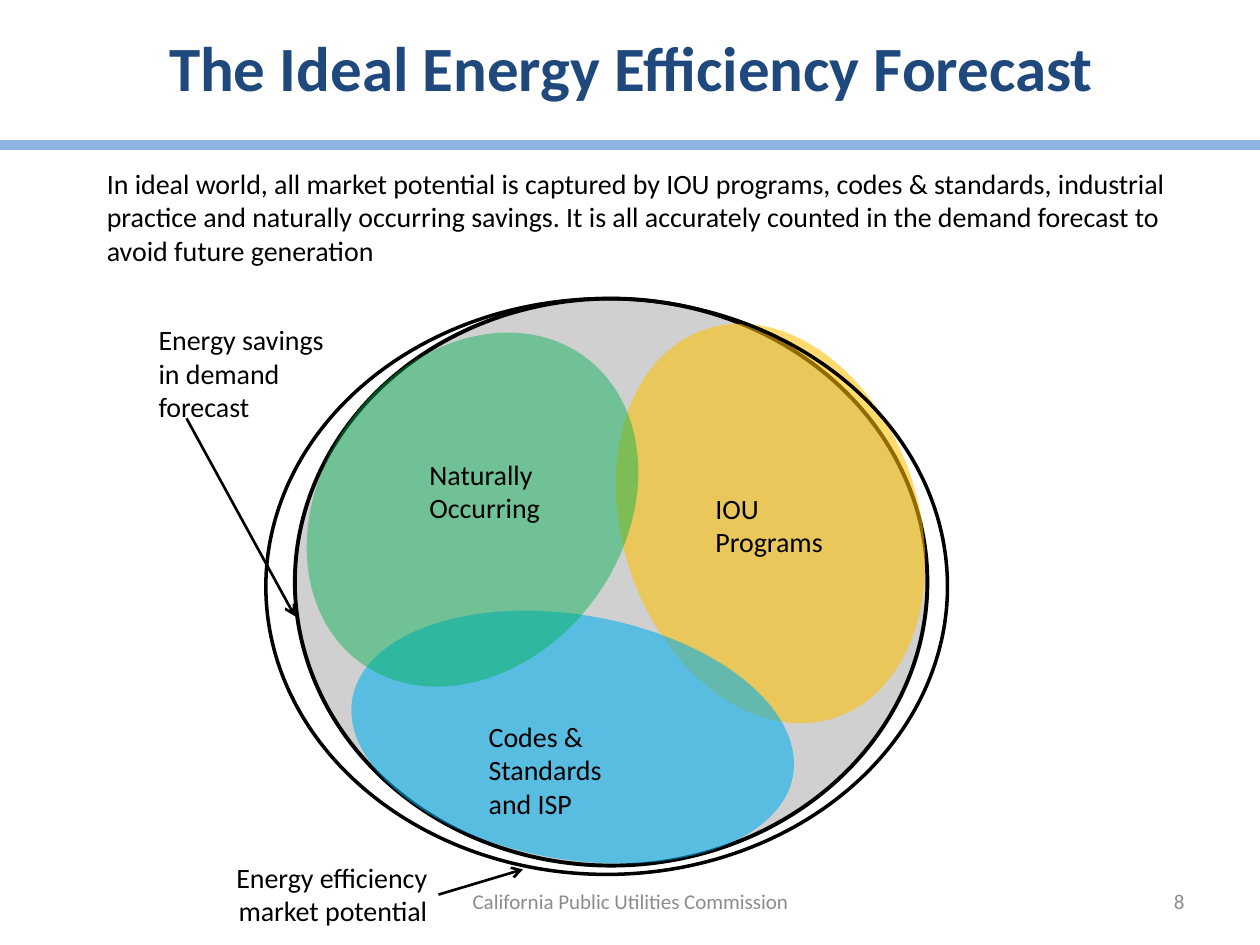
from lxml.etree import SubElement
from pptx import Presentation
from pptx.dml.color import RGBColor
from pptx.enum.shapes import MSO_CONNECTOR, MSO_SHAPE
from pptx.enum.text import MSO_ANCHOR, PP_ALIGN
from pptx.oxml.ns import qn
from pptx.util import Inches, Pt

FONT = "Calibri"
COLORS = {
    "black": "000000",
    "title": "1F497D",
    "rule": "8EB4E3",
    "footer": "8C8C8C",
    "forecast": "BFBFBF",
    "programs": "FFC000",
    "codes": "00B0F0",
    "natural": "00B050",
}


def rgb(name):
    return RGBColor.from_string(COLORS[name])


def add_text(s, box, text, size=16, color="black", bold=False,
             align=PP_ALIGN.LEFT, anchor=MSO_ANCHOR.TOP):
    tf = s.shapes.add_textbox(*map(Inches, box)).text_frame
    tf.word_wrap = True
    tf.vertical_anchor = anchor
    p = tf.paragraphs[0]
    p.text = text
    p.alignment = align
    p.font.name = FONT
    p.font.size = Pt(size)
    p.font.bold = bold
    p.font.color.rgb = rgb(color)


def add_ellipse(s, box, fill=None, opacity=100, line_width=None, rotation=0):
    sp = s.shapes.add_shape(MSO_SHAPE.OVAL, *map(Inches, box))
    sp.shadow.inherit = False
    sp.rotation = rotation
    if fill:
        sp.fill.solid()
        sp.fill.fore_color.rgb = rgb(fill)
        color = sp.fill._xPr.find(qn("a:solidFill"))[0]
        SubElement(color, qn("a:alpha")).set("val", str(opacity * 1000))
    else:
        sp.fill.background()
    if line_width:
        sp.line.color.rgb = rgb("black")
        sp.line.width = Pt(line_width)
    else:
        sp.line.fill.background()


def add_line(s, start, end, color="black", width=1.5, arrow=False):
    line = s.shapes.add_connector(
        MSO_CONNECTOR.STRAIGHT, *map(Inches, (*start, *end)))
    line.line.color.rgb = rgb(color)
    line.line.width = Pt(width)
    if arrow:
        SubElement(line.line._get_or_add_ln(), qn("a:tailEnd")).set("type", "arrow")
    SubElement(line._element.spPr, qn("a:effectLst"))


def add_venn(s):
    add_ellipse(s, (2.34, 2.37, 5.02, 4.5), "forecast", 72, line_width=2.25)
    add_ellipse(s, (4.94, 2.53, 2.35, 3.25), "programs", 56, rotation=341.5)
    add_ellipse(s, (2.77, 4.88, 3.55, 1.94), "codes", 57, rotation=9.9)
    add_ellipse(s, (2.55, 2.54, 2.4, 3.01), "natural", 46, rotation=36.5)
    add_ellipse(s, (2.11, 2.37, 5.41, 4.57), line_width=2)
    add_text(s, (3.31, 3.58, 1.42, 0.64), "Naturally Occurring")
    add_text(s, (5.58, 3.85, 1.18, 0.64), "IOU Programs")
    add_text(s, (3.78, 5.66, 1.38, 0.91), "Codes & Standards and ISP")


def add_callouts(s):
    add_line(s, (1.48, 3.32), (2.34, 4.89), arrow=True)
    add_text(s, (1.16, 2.51, 1.72, 0.91), "Energy savings in demand forecast")
    add_line(s, (3.48, 7.1), (4.15, 6.9), arrow=True)
    add_text(s, (1.48, 6.78, 2.01, 0.64), "Energy efficiency market potential",
             align=PP_ALIGN.RIGHT)


def main():
    prs = Presentation()
    prs.slide_width, prs.slide_height = Inches(10), Inches(7.5)
    s = prs.slides.add_slide(prs.slide_layouts[6])

    add_line(s, (0, 1.15), (10, 1.15), "rule", 6)
    add_text(s, (0.51, 0, 9, 1.05), "The Ideal Energy Efficiency Forecast",
             36, "title", True, PP_ALIGN.CENTER, MSO_ANCHOR.MIDDLE)
    add_venn(s)
    add_callouts(s)
    add_text(s, (0.75, 1.27, 8.9, 0.91),
             "In ideal world, all market potential is captured by IOU programs, "
             "codes & standards, industrial practice and naturally occurring "
             "savings. It is all accurately counted in the demand forecast to "
             "avoid future generation")
    add_text(s, (3.42, 6.95, 3.17, 0.4), "California Public Utilities Commission",
             12, "footer", align=PP_ALIGN.CENTER, anchor=MSO_ANCHOR.MIDDLE)
    add_text(s, (7.17, 6.95, 2.33, 0.4), "8",
             12, "footer", align=PP_ALIGN.RIGHT, anchor=MSO_ANCHOR.MIDDLE)

    prs.save("out.pptx")


if __name__ == "__main__":
    main()
